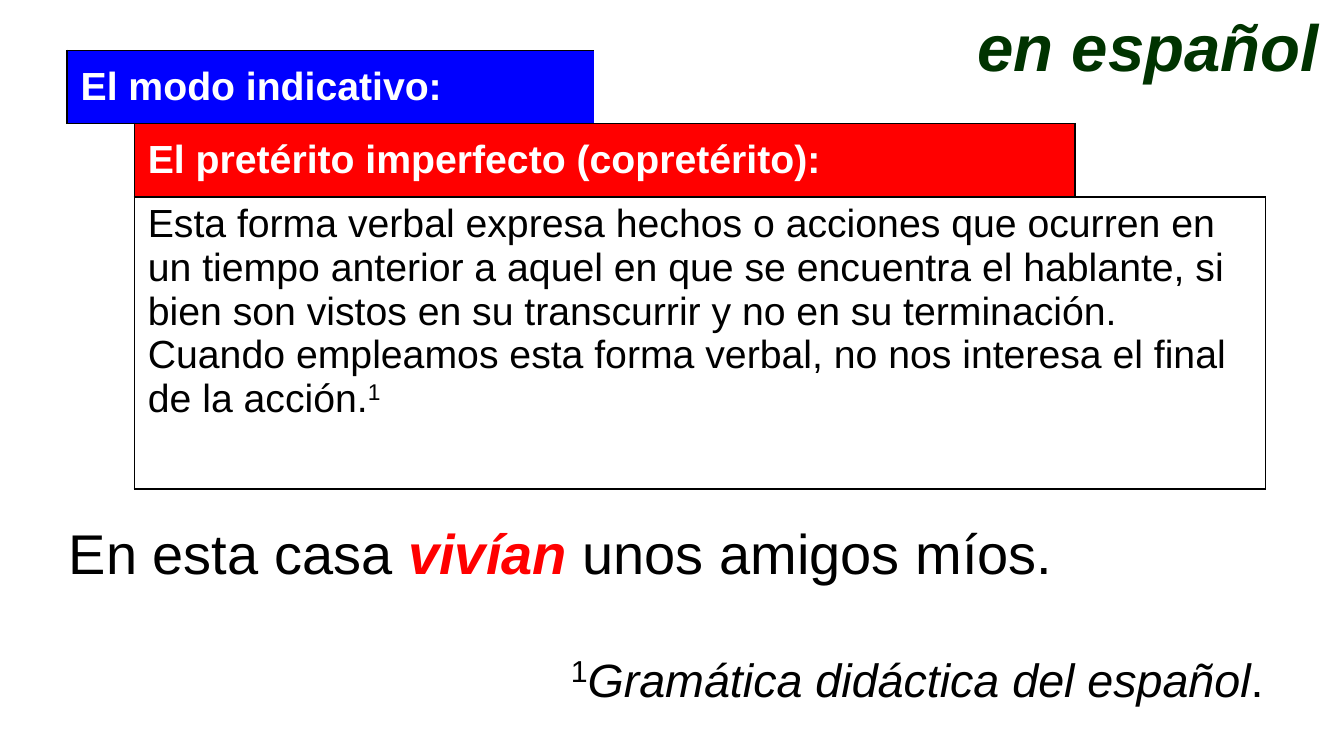
"""Build a slide that explains the Spanish imperfect tense."""
from dataclasses import dataclass

from lxml.etree import SubElement
from pptx import Presentation
from pptx.dml.color import RGBColor
from pptx.enum.text import MSO_ANCHOR as ANCHOR, MSO_AUTO_SIZE as AUTO, PP_ALIGN as ALIGN
from pptx.oxml.ns import qn
from pptx.util import Pt

EMU_PER_PX = 4572
FONT = "Arial"
NO_STYLE = "{2D5ABB26-0587-4C30-8999-92F81FD0307C}"
WHITE = RGBColor(0xFF, 0xFF, 0xFF)
BLACK = RGBColor(0x00, 0x00, 0x00)
BLUE = RGBColor(0x00, 0x00, 0xFF)
RED = RGBColor(0xFF, 0x00, 0x00)
GREEN = RGBColor(0x00, 0x33, 0x00)


@dataclass(frozen=True)
class Run:
    text: str
    size: int
    color: RGBColor = BLACK
    bold: bool = False
    italic: bool = False
    raised: bool = False


@dataclass(frozen=True)
class Label:
    box: tuple[int, int, int, int]
    runs: list[Run]
    align: ALIGN = ALIGN.LEFT
    wrap: bool = True


@dataclass(frozen=True)
class Cell:
    row: int
    col: int
    borders: str
    runs: list[Run]
    fill: RGBColor | None = None
    anchor: ANCHOR = ANCHOR.MIDDLE


@dataclass(frozen=True)
class Grid:
    left: int
    top: int
    cols: list[int]
    rows: list[int]
    cells: list[Cell]
    merge_row: int | None = None


INDICATIVE = Grid(100, 75, [784], [109], [
    Cell(0, 0, "LTB", [Run("El modo indicativo:", 21, WHITE, bold=True)], BLUE),
])

SOURCE = Label((100, 951, 1800, 104), [
    Run("1", 28, raised=True),
    Run("Gramática didáctica del español", 25, italic=True),
    Run(".", 25),
], align=ALIGN.RIGHT)

DEFINITION = (
    "Esta forma verbal expresa hechos o acciones que ocurren en un tiempo anterior a aquel "
    "en que se encuentra el hablante, si bien son vistos en su transcurrir y no en su "
    "terminación. Cuando empleamos esta forma verbal, no nos interesa el final de la acción."
)

IMPERFECT = Grid(200, 184, [1400, 283], [109, 435], [
    Cell(0, 0, "LRTB", [
        Run("El pretérito imperfecto (copretérito):", 21, WHITE, bold=True),
    ], RED),
    Cell(0, 1, "LB", []),
    Cell(1, 0, "LRTB", [Run(DEFINITION, 21), Run("1", 21, raised=True)], anchor=ANCHOR.TOP),
    Cell(1, 1, "RTB", []),
], merge_row=1)

EXAMPLE = Label((83, 762, 1834, 122), [
    Run("En esta casa ", 30),
    Run("vivían ", 30, RED, bold=True, italic=True),
    Run("unos amigos míos.", 30),
])

LANGUAGE = Label((1435, 0, 578, 138), [
    Run("en español", 35, GREEN, bold=True, italic=True),
], wrap=False)


def px(n: int) -> int:
    return n * EMU_PER_PX


def add_runs(p, runs: list[Run]) -> None:
    for run in runs:
        r = p.add_run()
        r.text = run.text
        r.font.name = FONT
        r.font.size = Pt(run.size)
        r.font.bold = run.bold
        r.font.italic = run.italic
        r.font.color.rgb = run.color
        if run.raised:
            r.font._element.set("baseline", "30000")


def add_label(s, label: Label) -> None:
    tf = s.shapes.add_textbox(*map(px, label.box)).text_frame
    tf.word_wrap = label.wrap
    tf.auto_size = AUTO.SHAPE_TO_FIT_TEXT
    p = tf.paragraphs[0]
    p.alignment = label.align
    add_runs(p, label.runs)


def add_borders(cell, sides: str) -> None:
    tc_pr = cell._tc.get_or_add_tcPr()
    for i, side in enumerate(sides):
        ln = SubElement(tc_pr, qn(f"a:ln{side}"), w=str(Pt(1)))
        fill = SubElement(ln, qn("a:solidFill"))
        SubElement(fill, qn("a:srgbClr"), val=str(BLACK))
        tc_pr.insert(i, ln)


def add_grid(s, grid: Grid) -> None:
    frame = s.shapes.add_table(len(grid.rows), len(grid.cols), px(grid.left), px(grid.top),
                               px(sum(grid.cols)), px(sum(grid.rows)))
    table = frame.table
    table.first_row = table.horz_banding = False
    table._tbl.tblPr.find(qn("a:tableStyleId")).text = NO_STYLE
    for col, width in zip(table.columns, grid.cols):
        col.width = px(width)
    for row, height in zip(table.rows, grid.rows):
        row.height = px(height)
    if grid.merge_row is not None:
        last = len(grid.cols) - 1
        table.cell(grid.merge_row, 0).merge(table.cell(grid.merge_row, last))
    for item in grid.cells:
        cell = table.cell(item.row, item.col)
        cell.margin_left = cell.margin_right = px(20)
        cell.margin_top = cell.margin_bottom = px(8)
        cell.vertical_anchor = item.anchor
        if item.fill is None:
            cell.fill.background()
        else:
            cell.fill.solid()
            cell.fill.fore_color.rgb = item.fill
        add_borders(cell, item.borders)
        add_runs(cell.text_frame.paragraphs[0], item.runs)


def main() -> None:
    prs = Presentation()
    prs.slide_width, prs.slide_height = px(2000), px(1125)
    s = prs.slides.add_slide(prs.slide_layouts[6])
    add_grid(s, INDICATIVE)
    add_label(s, SOURCE)
    add_grid(s, IMPERFECT)
    add_label(s, EXAMPLE)
    add_label(s, LANGUAGE)
    prs.save("out.pptx")


if __name__ == "__main__":
    main()
